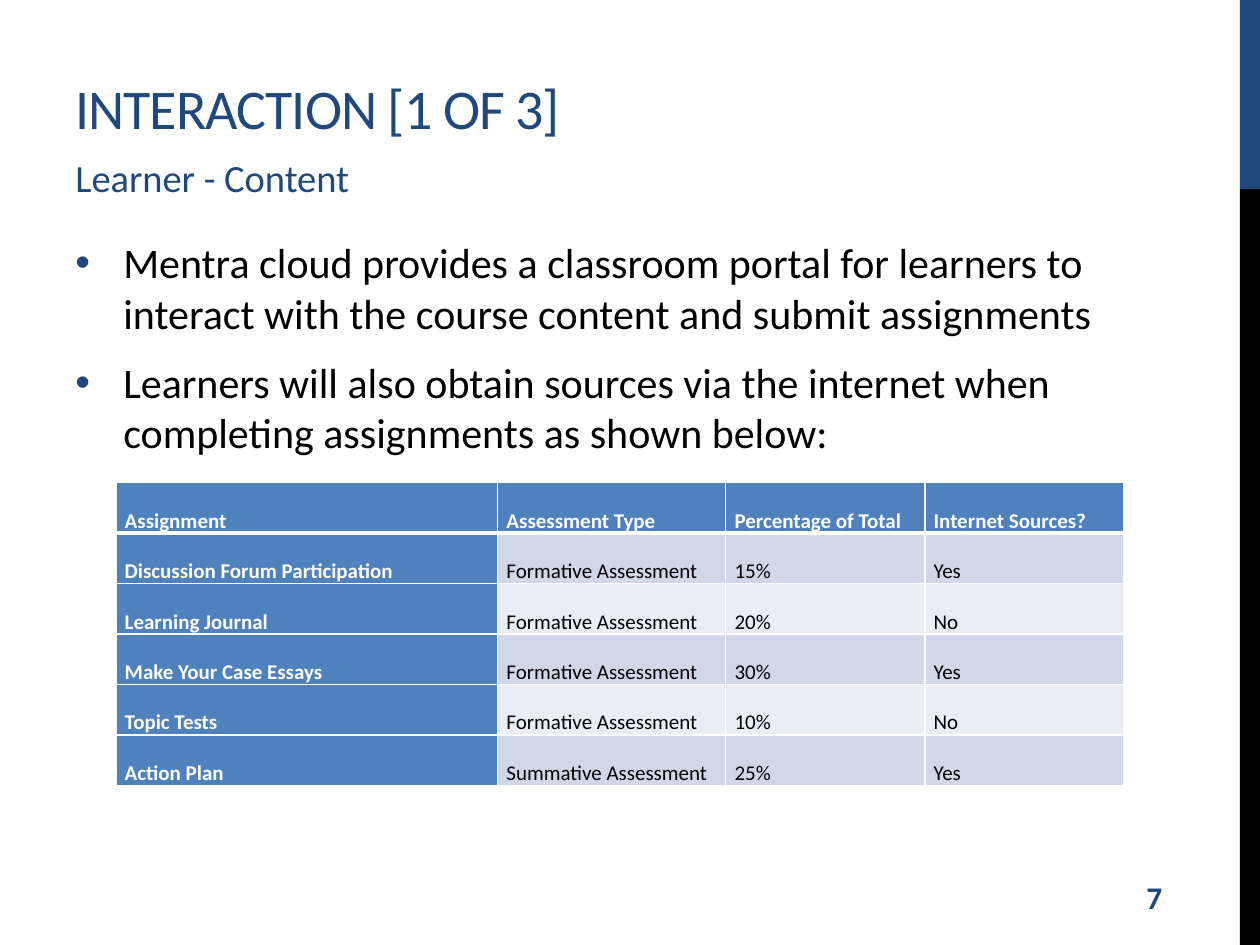
from lxml import etree
from pptx import Presentation
from pptx.dml.color import RGBColor
from pptx.enum.shapes import MSO_SHAPE
from pptx.enum.text import MSO_ANCHOR
from pptx.oxml.ns import qn
from pptx.util import Inches, Pt

RECTANGLE = MSO_SHAPE.RECTANGLE
TOP, MIDDLE, BOTTOM = MSO_ANCHOR.TOP, MSO_ANCHOR.MIDDLE, MSO_ANCHOR.BOTTOM

FONT = "Calibri"
COLORS = {
    "navy": "1F497D",
    "black": "000000",
    "white": "FFFFFF",
    "header": "4F81BD",
    "odd_row": "D0D8E8",
    "even_row": "E9EDF4",
}

BULLETS = [
    "Mentra cloud provides a classroom portal for learners to interact with "
    "the course content and submit assignments",
    "Learners will also obtain sources via the internet when completing "
    "assignments as shown below:",
]
ASSIGNMENTS = [
    ("Assignment", "Assessment Type", "Percentage of Total", "Internet Sources?"),
    ("Discussion Forum Participation", "Formative Assessment", "15%", "Yes"),
    ("Learning Journal", "Formative Assessment", "20%", "No"),
    ("Make Your Case Essays", "Formative Assessment", "30%", "Yes"),
    ("Topic Tests", "Formative Assessment", "10%", "No"),
    ("Action Plan", "Summative Assessment", "25%", "Yes"),
]
COLUMN_WIDTHS = [3.03, 1.81, 1.58, 1.58]
ROW_HEIGHT = 0.4


def rgb(color):
    return RGBColor.from_string(COLORS[color])


def set_attributes(target, values):
    for name, value in values.items():
        setattr(target, name, value)


def add_run(paragraph, text, size, color, bold=False):
    run = paragraph.add_run()
    run.text = text
    set_attributes(run.font, {"name": FONT, "size": Pt(size), "bold": bold})
    run.font.color.rgb = rgb(color)
    return run


def add_bar(slide, top, height, color):
    bar = slide.shapes.add_shape(
        RECTANGLE, Inches(9.84), Inches(top), Inches(0.16), Inches(height))
    bar.shadow.inherit = False
    bar.fill.solid()
    bar.fill.fore_color.rgb = rgb(color)
    bar.line.fill.background()


def add_text(slide, bounds, lines, size, color, anchor=TOP, bold=False, spacing=None):
    frame = slide.shapes.add_textbox(*map(Inches, bounds)).text_frame
    set_attributes(frame, {"word_wrap": True, "vertical_anchor": anchor})
    for index, line in enumerate(lines):
        paragraph = frame.add_paragraph() if index else frame.paragraphs[0]
        set_attributes(paragraph, spacing or {})
        add_run(paragraph, line, size, color, bold)
    return frame.paragraphs


def add_bullet(paragraph):
    properties = paragraph._p.get_or_add_pPr()
    properties.set("marL", str(Inches(0.38)))
    properties.set("indent", str(-Inches(0.38)))
    bullet_color = etree.SubElement(properties, qn("a:buClr"))
    etree.SubElement(bullet_color, qn("a:srgbClr"), val=COLORS["navy"])
    etree.SubElement(properties, qn("a:buFont"), typeface="Arial")
    etree.SubElement(properties, qn("a:buChar"), char="•")


def add_borders(cell, bottom_width):
    properties = cell._tc.get_or_add_tcPr()
    widths = {"a:lnL": 1, "a:lnR": 1, "a:lnT": 1, "a:lnB": bottom_width}
    for side, width in widths.items():
        border = etree.SubElement(properties, qn(side), w=str(Pt(width)))
        fill = etree.SubElement(border, qn("a:solidFill"))
        etree.SubElement(fill, qn("a:srgbClr"), val=COLORS["white"])


def fill_cell(cell, text, row, column):
    heading = row == 0 or column == 0
    band = "odd_row" if row % 2 else "even_row"
    add_borders(cell, 3 if row == 0 else 1)
    cell.fill.solid()
    cell.fill.fore_color.rgb = rgb("header" if heading else band)
    set_attributes(cell, {
        "margin_left": Inches(0.07), "margin_right": Inches(0.07),
        "margin_top": 0, "margin_bottom": 0,
    })
    paragraph = cell.text_frame.paragraphs[0]
    paragraph.line_spacing = 2.0
    add_run(paragraph, text, 12, "white" if heading else "black", heading)


def add_assignment_table(slide):
    table = slide.shapes.add_table(
        len(ASSIGNMENTS), len(COLUMN_WIDTHS), Inches(0.92), Inches(3.83),
        Inches(sum(COLUMN_WIDTHS)), Inches(ROW_HEIGHT * len(ASSIGNMENTS))).table
    set_attributes(table, {"first_col": True, "first_row": True})
    for column, width in zip(table.columns, COLUMN_WIDTHS):
        column.width = Inches(width)
    for row, assignment in enumerate(ASSIGNMENTS):
        for column, text in enumerate(assignment):
            fill_cell(table.cell(row, column), text, row, column)


def main():
    presentation = Presentation()
    set_attributes(presentation, {"slide_width": Inches(10), "slide_height": Inches(7.5)})
    slide = presentation.slides.add_slide(presentation.slide_layouts[6])

    add_bar(slide, 0, 1.5, "navy")
    add_bar(slide, 1.5, 6, "black")

    title, = add_text(slide, (0.5, 0.17, 8.42, 1), ["INTERACTION [1 OF 3]"],
                      32, "navy", BOTTOM)
    title.runs[0].font._element.set("spc", "-60")
    add_text(slide, (0.5, 1.17, 8.42, 0.42), ["Learner - Content"], 22, "navy",
             spacing={"space_before": Pt(4.4), "space_after": Pt(6)})
    points = add_text(slide, (0.5, 1.83, 8.42, 4.87), BULLETS, 24, "black",
                      spacing={"space_before": Pt(4.8), "space_after": Pt(6)})
    for point in points:
        add_bullet(point)
    add_text(slide, (9, 6.92, 0.69, 0.4), ["7"], 18, "navy", MIDDLE, bold=True)
    add_assignment_table(slide)

    presentation.save("out.pptx")


if __name__ == "__main__":
    main()
